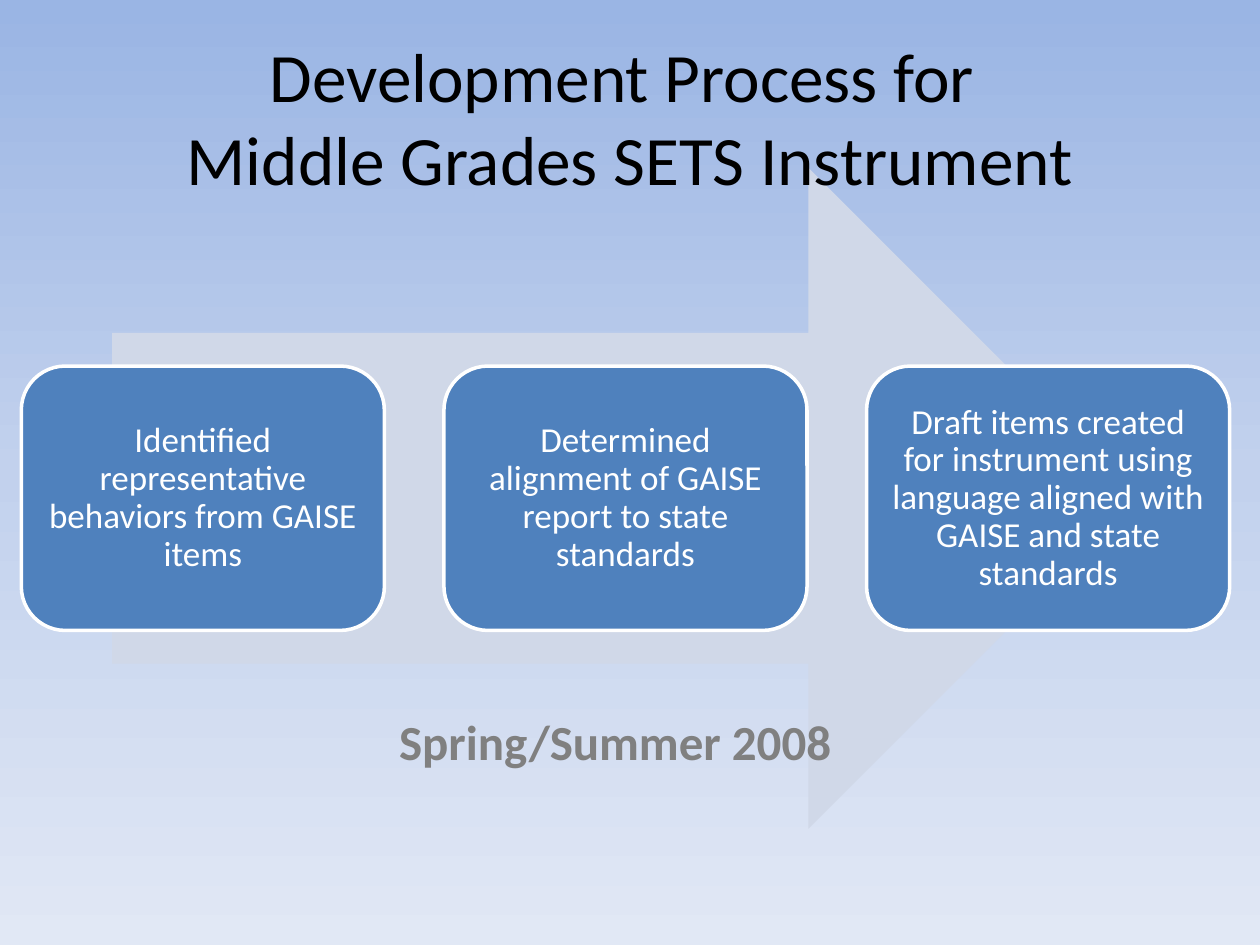
from copy import deepcopy

from pptx import Presentation
from pptx.dml.color import RGBColor
from pptx.enum import shapes, text
from pptx.util import Cm, Pt

FONT = "Calibri"
STEPS = [
    "Identified representative behaviors from GAISE items",
    "Determined alignment of GAISE report to state standards",
    "Draft items created for instrument using language aligned with GAISE and state standards",
]


def paint(color, value):
    color.rgb = RGBColor.from_string(value)


def add_span(para, words, size, color, bold=False):
    span = para.add_run()
    span.text = words
    span.font.name, span.font.size, span.font.bold = FONT, Pt(size), bold
    paint(span.font.color, color)


def fill_background(page, colors):
    """Vertical gradient with evenly spaced stops."""
    fill = page.background.fill
    fill.gradient()
    fill.gradient_angle = 270
    stop_list = page.element.xpath(".//a:gsLst")[0]
    while len(stop_list) < len(colors):
        stop_list.append(deepcopy(stop_list[-1]))
    for index, (stop, value) in enumerate(zip(fill.gradient_stops, colors)):
        stop.position = index / (len(colors) - 1)
        paint(stop.color, value)


def add_block(page, kind, left, top, width, height, fill):
    block = page.shapes.add_shape(kind, Cm(left), Cm(top), Cm(width), Cm(height))
    block.shadow.inherit = False
    block.fill.solid()
    paint(block.fill.fore_color, fill)
    block.line.fill.background()
    return block


def add_process(page, left, top, width, height):
    """Wide arrow with a row of step boxes centred on it."""
    # Arrow, inset from the left edge of the row
    add_block(page, shapes.MSO_SHAPE.RIGHT_ARROW,
              left + 1.83, top, 20.7, height, "D0D8E8")

    # Steps
    step_width, step_height = 7.32, 5.33
    pitch = (width - step_width) / (len(STEPS) - 1)
    for index, words in enumerate(STEPS):
        step = add_block(page, shapes.MSO_SHAPE.ROUNDED_RECTANGLE,
                         left + index * pitch, top + (height - step_height) / 2,
                         step_width, step_height, "4F81BD")
        paint(step.line.color, "FFFFFF")
        step.line.width = Pt(2)
        frame = step.text_frame
        frame.word_wrap = True
        frame.vertical_anchor = text.MSO_ANCHOR.MIDDLE
        frame.margin_left = frame.margin_right = Cm(0.2)
        frame.margin_top = frame.margin_bottom = Cm(0.2)
        para = frame.paragraphs[0]
        para.alignment = text.PP_ALIGN.CENTER
        para.line_spacing = 0.9
        add_span(para, words, 20, "FFFFFF")


def place_title(page, left, top, width, height):
    title = page.shapes.title
    title.left, title.top = Cm(left), Cm(top)
    title.width, title.height = Cm(width), Cm(height)
    title.text_frame.vertical_anchor = text.MSO_ANCHOR.MIDDLE
    para = title.text_frame.paragraphs[0]
    para.alignment = text.PP_ALIGN.CENTER
    add_span(para, "Development Process for ", 39.6, "000000")
    para.add_line_break()
    add_span(para, "Middle Grades SETS Instrument", 39.6, "000000")
    # Bring the title in front of the arrow tip
    page.shapes.element.append(title.element)


def add_date(page, left, top, width, height):
    box = page.shapes.add_textbox(Cm(left), Cm(top), Cm(width), Cm(height))
    box.text_frame.word_wrap = True
    box.text_frame.auto_size = text.MSO_AUTO_SIZE.SHAPE_TO_FIT_TEXT
    para = box.text_frame.paragraphs[0]
    para.alignment = text.PP_ALIGN.CENTER
    add_span(para, "Spring/Summer 2008", 28, "808080", bold=True)


def main():
    deck = Presentation()
    deck.slide_width, deck.slide_height = Cm(25.4), Cm(19.05)
    page = deck.slides.add_slide(deck.slide_layouts[5])
    fill_background(page, ["9AB5E4", "C2D1ED", "E1E8F5"])
    add_process(page, 0.43, 3.38, 24.36, 13.33)
    place_title(page, 1.27, 0.76, 22.86, 3.18)
    add_date(page, 7.42, 14.22, 9.96, 1.45)
    deck.save("out.pptx")


if __name__ == "__main__":
    main()
